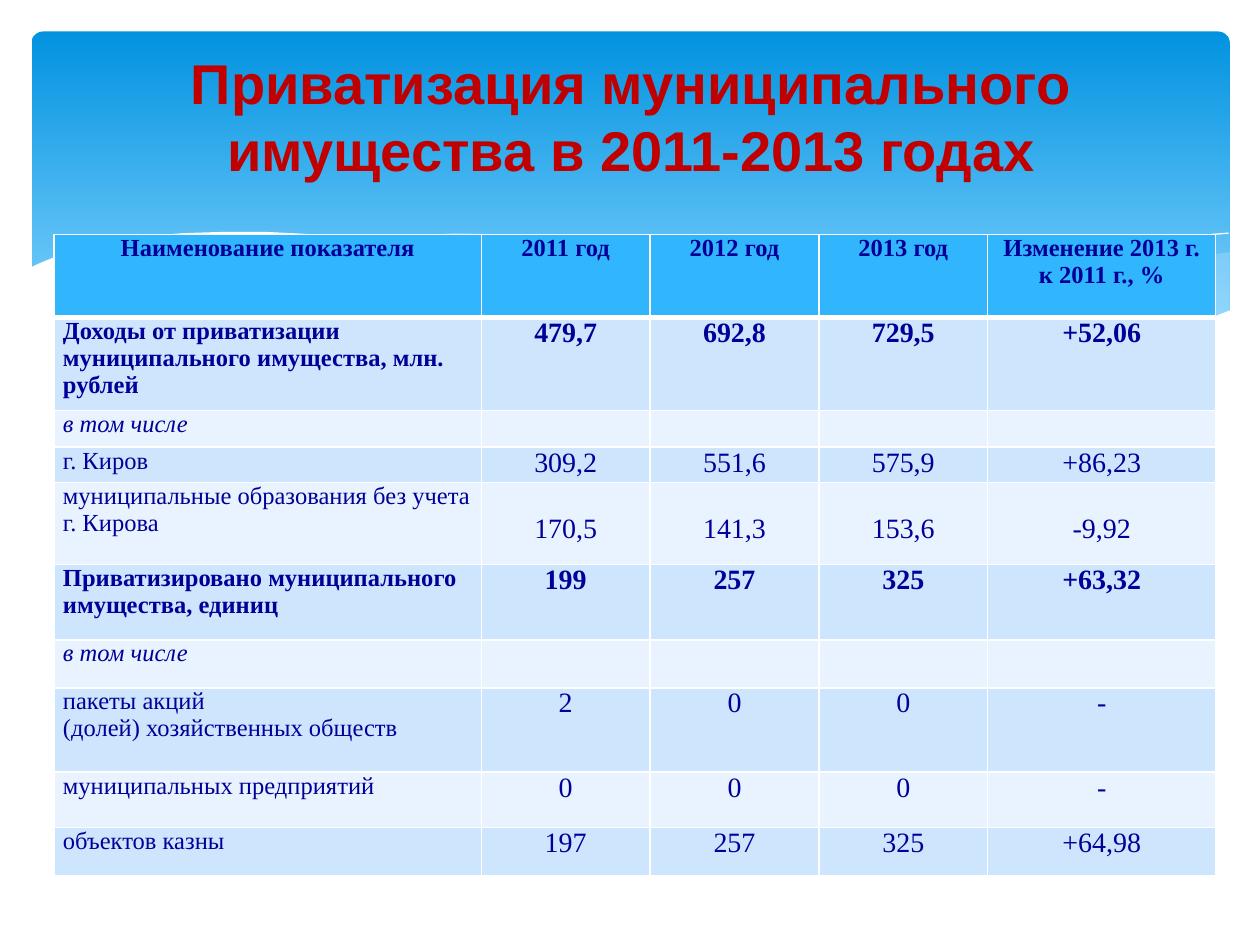
from pptx import Presentation
from pptx.dml.color import RGBColor as RGB
from pptx.enum.shapes import MSO_SHAPE as SHAPE
from pptx.enum.text import MSO_ANCHOR as ANCHOR, MSO_AUTO_SIZE as FIT, PP_ALIGN as ALIGN
from pptx.oxml.ns import qn
from pptx.util import Inches, Pt
from lxml.etree import SubElement

THEME = {
    "white": RGB.from_string("FFFFFF"), "wave": RGB.from_string("C6E7FC"),
    "sky": [(0, RGB.from_string("0293E0")), (0.9, RGB.from_string("83D3FE"))],
    "title": RGB.from_string("C00000"), "ink": RGB.from_string("000099"),
    "header": RGB.from_string("31B6FD"),
    "bands": [RGB.from_string("E8F3FF"), RGB.from_string("CEE5FE")],
    "title_font": "Arial", "table_font": "Times New Roman",
    "title_size": Pt(32), "label_size": Pt(14), "value_size": Pt(16),
}

deck = Presentation()
deck.slide_width, deck.slide_height = Inches(10), Inches(7.5)
UNIT = deck.slide_width // 1000  # the grid: 1000 columns by 750 rows
page = deck.slides.add_slide(deck.slide_layouts[5])


def add_curve(points, color, alpha=100, closed=True):
    """Draw a filled wave, or an open hairline, through grid points."""
    builder = page.shapes.build_freeform(*points[0], scale=UNIT)
    builder.add_line_segments(points[1:], close=closed)
    curve = builder.convert_to_shape()
    curve.shadow.inherit = False
    if closed:
        curve.fill.solid()
        curve.fill.fore_color.rgb = color
        curve.line.fill.background()
        tint = curve.fill._xPr.find(qn("a:solidFill"))[0]
        SubElement(tint, qn("a:alpha"), val=str(alpha * 1000))
    else:
        curve.fill.background()
        curve.line.color.rgb = color
        curve.line.width = Pt(0)


def set_border(cell, side, points):
    """Give one side of a cell a white line."""
    line = SubElement(cell._tc.get_or_add_tcPr(), qn(f"a:ln{side}"), w=str(Pt(points)))
    paint = SubElement(line, qn("a:solidFill"))
    SubElement(paint, qn("a:srgbClr"), val=str(THEME["white"]))


# Sky band
sky = page.shapes.add_shape(SHAPE.ROUNDED_RECTANGLE, *(n * UNIT for n in (25, 25, 951, 270)))
sky.adjustments[0] = 0.034
sky.shadow.inherit = False
sky.line.fill.background()
sky.fill.gradient()
sky.fill.gradient_angle = 270
for stop, (position, color) in zip(sky.fill.gradient_stops, THEME["sky"]):
    stop.position = position
    stop.color.rgb = color

# Translucent waves
add_curve([(976, 200), (948, 204), (921, 210), (891, 216), (861, 223), (805, 237), (753, 248),
           (706, 257), (661, 265), (691, 269), (719, 272), (745, 275), (769, 277), (803, 278),
           (835, 277), (863, 275), (889, 272), (913, 267), (935, 262), (949, 257), (963, 252),
           (976, 247)], THEME["wave"], 29)
add_curve([(893, 273), (866, 269), (837, 265), (807, 260), (775, 254), (741, 247), (706, 240),
           (668, 231), (629, 222), (598, 214), (569, 208), (541, 203), (514, 198), (489, 194),
           (465, 191), (442, 189), (420, 187), (399, 186), (361, 185), (328, 187), (299, 189),
           (286, 191), (323, 196), (362, 203), (404, 211), (449, 222), (491, 232), (530, 240),
           (566, 248), (601, 255), (634, 261), (665, 266), (695, 270), (722, 274), (748, 276),
           (785, 278), (828, 278), (857, 277), (876, 275)], THEME["wave"], 40)

# Hairline crests
add_curve([(309, 195), (328, 192), (344, 190), (363, 189), (387, 187), (416, 187), (450, 188),
           (489, 190), (533, 194), (582, 200), (636, 208), (695, 219), (760, 233), (831, 251),
           (907, 272)], THEME["white"], closed=False)
add_curve([(613, 257), (653, 246), (695, 235), (748, 223), (806, 210), (866, 199), (895, 194),
           (924, 190), (951, 187), (975, 185)], THEME["white"], closed=False)

# White wave that cuts the band off
add_curve([(977, 246), (959, 253), (940, 259), (920, 265), (899, 269), (875, 273), (850, 275),
           (823, 277), (793, 276), (761, 275), (726, 272), (688, 268), (648, 262), (603, 254),
           (555, 245), (503, 233), (447, 220), (391, 207), (340, 197), (292, 190), (250, 186),
           (211, 184), (177, 184), (146, 185), (119, 187), (95, 191), (76, 195), (59, 199),
           (46, 203), (36, 207), (29, 210), (23, 213), (23, 329), (977, 329)], THEME["white"])

# Title, raised above the waves
title = page.shapes.title
page.shapes._spTree.append(title._element)
for name, columns in dict(left=51, top=29, width=900, height=125).items():
    setattr(title, name, columns * UNIT)
frame = title.text_frame
frame.text = "Приватизация муниципального имущества в 2011-2013 годах"
for name, value in dict(word_wrap=True, auto_size=FIT.NONE, vertical_anchor=ANCHOR.MIDDLE).items():
    setattr(frame, name, value)
para = frame.paragraphs[0]
para.alignment = ALIGN.CENTER
span = para.runs[0]
for name, value in dict(name=THEME["title_font"], size=THEME["title_size"], bold=True).items():
    setattr(span.font, name, value)
span.font.color.rgb = THEME["title"]

# Table content: style, row height, cells
ROWS = [
    ("bold", 66, ["Наименование показателя", "2011 год", "2012 год", "2013 год",
                  "Изменение 2013 г. к 2011 г., %"]),
    ("bold", 74, ["Доходы от приватизации муниципального имущества, млн. рублей",
                  "479,7", "692,8", "729,5", "+52,06"]),
    ("italic", 29, ["в том числе", "", "", "", ""]),
    ("plain", 28, ["г. Киров", "309,2", "551,6", "575,9", "+86,23"]),
    ("plain", 65, ["муниципальные образования без учета г. Кирова",
                   "170,5", "141,3", "153,6", "-9,92"]),
    ("bold", 60, ["Приватизировано муниципального имущества, единиц",
                  "199", "257", "325", "+63,32"]),
    ("italic", 38, ["в том числе", "", "", "", ""]),
    ("plain", 67, ["пакеты акций\n(долей) хозяйственных обществ", "2", "0", "0", "-"]),
    ("plain", 44, ["муниципальных предприятий", "0", "0", "0", "-"]),
    ("plain", 38, ["объектов казны", "197", "257", "325", "+64,98"]),
]
COLUMNS = [339, 134, 134, 134, 181]
LOWERED_ROW = 4  # its values stand one line down

heights = [height for _, height, _ in ROWS]
table = page.shapes.add_table(len(ROWS), len(COLUMNS), 43 * UNIT, 186 * UNIT,
                              sum(COLUMNS) * UNIT, sum(heights) * UNIT).table
for column, width in zip(table.columns, COLUMNS):
    column.width = width * UNIT

for r, (style, height, texts) in enumerate(ROWS):
    table.rows[r].height = height * UNIT
    for c, text in enumerate(texts):
        cell = table.cell(r, c)
        is_value = r > 0 and c > 0
        lowered = is_value and r == LOWERED_ROW
        margins = dict(margin_left=7, margin_right=7, margin_bottom=0,
                       margin_top=25 if lowered else 0)
        for name, columns in margins.items():
            setattr(cell, name, columns * UNIT)
        for side in "LRTB":
            set_border(cell, side, 3 if r == 0 and side == "B" else 1)
        cell.fill.solid()
        cell.fill.fore_color.rgb = THEME["bands"][r % 2] if r else THEME["header"]
        cell.text = text
        size = THEME["value_size" if is_value else "label_size"]
        look = dict(name=THEME["table_font"], size=size,
                    bold=style == "bold", italic=style == "italic")
        for para in cell.text_frame.paragraphs:
            para.alignment = ALIGN.CENTER if r == 0 or c > 0 else ALIGN.LEFT
            for span in para.runs:
                for name, value in look.items():
                    setattr(span.font, name, value)
                span.font.color.rgb = THEME["ink"]
            if not text:  # keeps the empty cell from stretching its row
                SubElement(para._p, qn("a:endParaRPr"), sz=str(int(size.pt * 100)))

deck.save("out.pptx")
